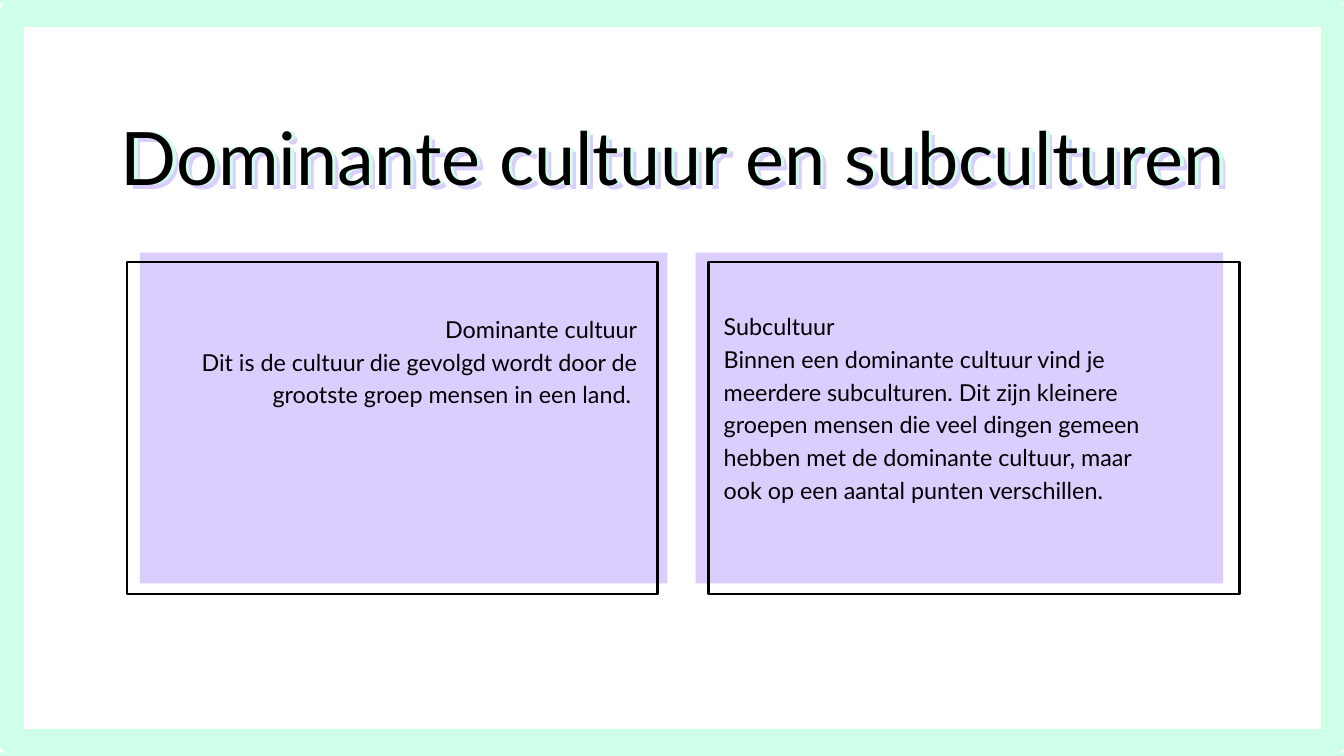
from pptx import Presentation
from pptx.dml.color import RGBColor
from pptx.enum.shapes import MSO_SHAPE
from pptx.enum.text import MSO_ANCHOR, MSO_AUTO_SIZE, PP_ALIGN
from pptx.util import Inches, Pt

RECT = MSO_SHAPE.RECTANGLE
LEFT, RIGHT = PP_ALIGN.LEFT, PP_ALIGN.RIGHT
FONT = "Lato"
COLORS = {"lilac": "DCCDFF", "mint": "CEFFE8", "black": "000000"}

# Content
TITLE = "Dominante cultuur en subculturen"
TITLE_BOX = (1.8, 1.67, 18, 1.31)
TITLE_ECHOES = [("lilac", 0.09, 0.06), ("mint", 0.05, 0)]  # colour, dx, dy
CARDS = [
    {"panel_x": 2.08, "outline_x": 1.89, "text_at": (2.86, 4.62), "align": RIGHT,
     "lines": ["Dominante cultuur",
               "Dit is de cultuur die gevolgd wordt door de grootste groep "
               "mensen in een land. "]},
    {"panel_x": 10.35, "outline_x": 10.54, "text_at": (10.77, 4.58), "align": LEFT,
     "lines": ["Subcultuur",
               "Binnen een dominante cultuur vind je meerdere subculturen. "
               "Dit zijn kleinere groepen mensen die veel dingen gemeen hebben "
               "met de dominante cultuur, maar ook op een aantal punten "
               "verschillen."]},
]


def rgb(name):
    return RGBColor.from_string(COLORS[name])


def add_rect(s, box, fill=None, line=None, width=0):
    sp = s.shapes.add_shape(RECT, *map(Inches, box))
    sp.shadow.inherit = False
    if fill:
        sp.fill.solid()
        sp.fill.fore_color.rgb = rgb(fill)
    else:
        sp.fill.background()
    if line:
        sp.line.color.rgb = rgb(line)
        sp.line.width = Pt(width)
    else:
        sp.line.fill.background()


def set_text(sp, lines, size, spacing, color="black", align=LEFT):
    tf = sp.text_frame
    tf.text = "\n".join(lines)
    tf.word_wrap = True
    tf.auto_size = MSO_AUTO_SIZE.NONE
    tf.vertical_anchor = MSO_ANCHOR.TOP
    tf.margin_left = tf.margin_right = tf.margin_top = tf.margin_bottom = 0
    for p in tf.paragraphs:
        p.alignment = align
        p.line_spacing = Pt(spacing)
        p.space_before = Pt(0)
        for r in p.runs:
            r.font.name = FONT
            r.font.size = Pt(size)
            r.font.color.rgb = rgb(color)


def add_title(s):
    x, y, w, h = TITLE_BOX
    for color, dx, dy in TITLE_ECHOES:
        echo = s.shapes.add_textbox(*map(Inches, (x + dx, y + dy, w, h)))
        set_text(echo, [TITLE], 79, 94.8, color)
    title = s.shapes.title
    title.left, title.top, title.width, title.height = map(Inches, TITLE_BOX)
    set_text(title, [TITLE], 79, 94.8)
    s.shapes._spTree.append(title._element)  # in front of its echoes


def add_card(s, card):
    add_rect(s, (card["panel_x"], 3.76, 7.85, 4.92), fill="lilac")
    box = s.shapes.add_textbox(*map(Inches, (*card["text_at"], 6.62, 2.92)))
    set_text(box, card["lines"], 25, 35, align=card["align"])
    add_rect(s, (card["outline_x"], 3.9, 7.9, 4.94), line="black", width=3)


def main():
    prs = Presentation()
    prs.slide_width, prs.slide_height = Inches(20), Inches(11.25)
    s = prs.slides.add_slide(prs.slide_layouts[5])

    add_title(s)
    for card in CARDS:
        add_card(s, card)
    # Mint frame along the slide edge
    add_rect(s, (0.17, 0.21, 19.67, 10.83), line="mint", width=27)
    # Strips that close the gap above and below the frame
    for y in (0, 11.2):
        add_rect(s, (0, y, 20, 0.05), fill="mint")

    prs.save("out.pptx")


if __name__ == "__main__":
    main()
